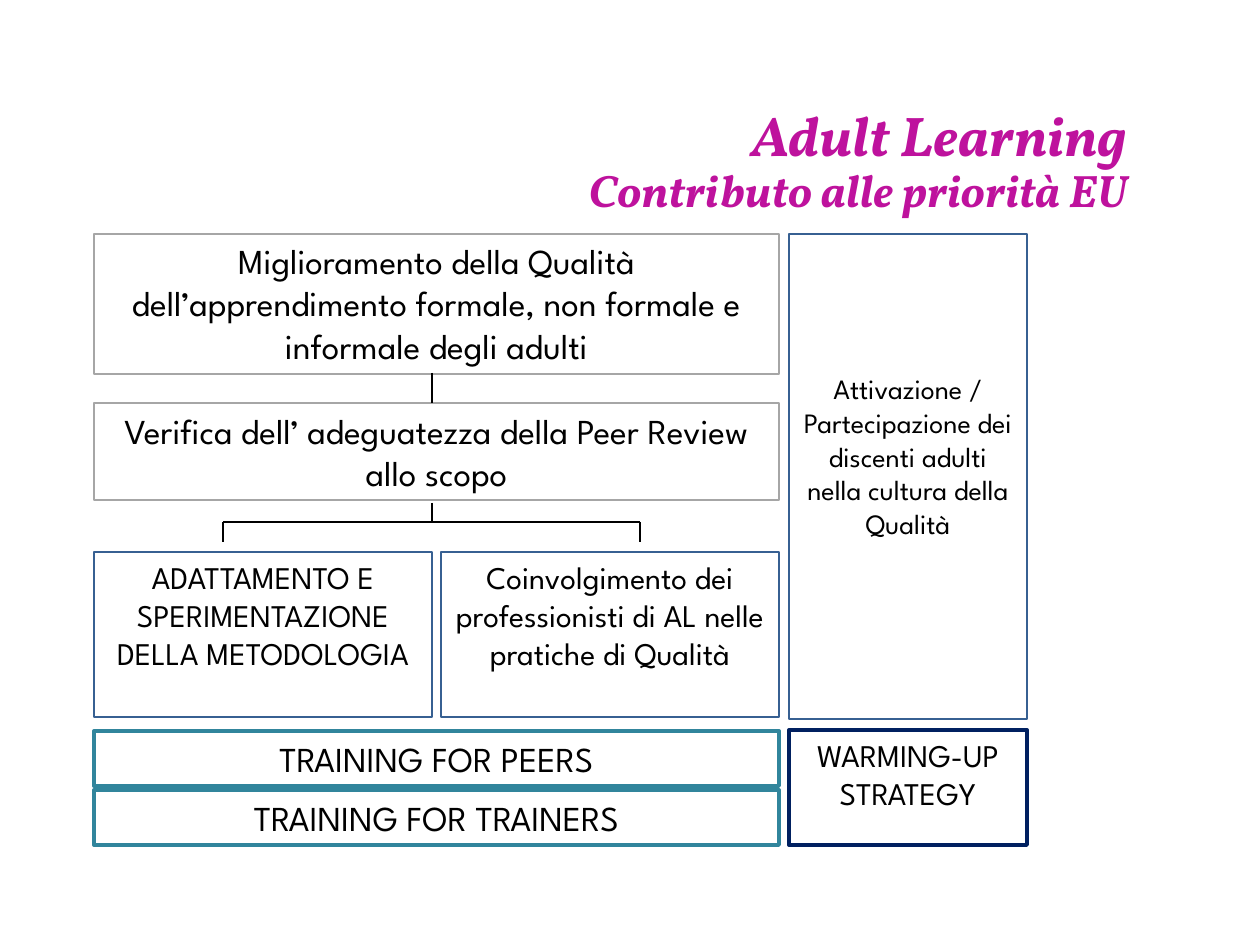
from lxml import etree
from pptx import Presentation, util as u
from pptx.dml.color import RGBColor
from pptx.enum import shapes, text
from pptx.oxml.ns import qn

PX = 914400 / 126  # EMU per px
COLORS = {"text": "000000", "title": "BE129D", "grey": "A6A6A6",
          "blue": "376092", "navy": "002060", "teal": "31859C"}
BODY_FONT, TITLE_FONT = "League Spartan", "Vollkorn"

# Columns
LEFT, HALF, GAP = 94, 338, 9
FULL = 2 * HALF + GAP
SIDE, SIDE_W = 789, 238


def px(n):
    return u.Emu(round(n * PX))


def color(name):
    return RGBColor.from_string(COLORS[name])


def write(p, words, size, font=BODY_FONT, ink="text", bold=False, italic=False,
          align=text.PP_ALIGN.CENTER, spacing=None):
    p.alignment = align
    if spacing:
        p.line_spacing = spacing
    r = p.add_run()
    r.text = words
    f = r.font
    f.name, f.size, f.bold, f.italic = font, u.Pt(size), bold, italic
    f.color.rgb = color(ink)


def add_title(s, lines):
    sp = s.shapes.title
    sp.left, sp.top, sp.width, sp.height = px(302), px(96), px(838), px(133)
    tf = sp.text_frame
    tf.auto_size = text.MSO_AUTO_SIZE.NONE
    tf.vertical_anchor = text.MSO_ANCHOR.MIDDLE
    for i, (words, size) in enumerate(lines):
        p = tf.add_paragraph() if i else tf.paragraphs[0]
        p.space_before = u.Pt(0)
        write(p, words, size, font=TITLE_FONT, ink="title", bold=True,
              italic=True, align=text.PP_ALIGN.RIGHT, spacing=0.9)


def add_box(s, x, y, w, h, words, size, border, weight=0.75, inset=6):
    sp = s.shapes.add_shape(shapes.MSO_SHAPE.RECTANGLE, px(x), px(y), px(w), px(h))
    sp.shadow.inherit = False
    sp.fill.background()
    sp.line.color.rgb = color(border)
    sp.line.width = u.Pt(weight)
    tf = sp.text_frame
    tf.word_wrap = True
    tf.vertical_anchor = text.MSO_ANCHOR.TOP
    tf.margin_top = px(inset)
    write(tf.paragraphs[0], words, size)


def add_line(s, x1, y1, x2, y2):
    ln = s.shapes.add_connector(shapes.MSO_CONNECTOR.STRAIGHT,
                                px(x1), px(y1), px(x2), px(y2))
    ln.line.color.rgb = color("text")
    ln.line.width = u.Pt(1.5)
    etree.SubElement(ln._element.spPr, qn("a:effectLst"))


def main():
    prs = Presentation()
    prs.slide_width, prs.slide_height = px(1260), px(945)
    s = prs.slides.add_slide(prs.slide_layouts[5])

    add_title(s, [("Adult Learning", 32), ("Contributo alle priorità EU", 26)])

    # Goals
    add_box(s, LEFT, 234, FULL, 140, "Miglioramento della Qualità "
            "dell’apprendimento formale, non formale e informale degli adulti",
            20, "grey")
    add_box(s, LEFT, 403, FULL, 97,
            "Verifica dell’ adeguatezza della Peer Review allo scopo", 20, "grey")

    # Two strands
    strands = ["ADATTAMENTO E SPERIMENTAZIONE DELLA METODOLOGIA",
               "Coinvolgimento dei professionisti di AL nelle pratiche di Qualità"]
    for i, words in enumerate(strands):
        add_box(s, LEFT + i * (HALF + GAP), 552, HALF, 165, words, 18, "blue")

    # Training bars
    for i, words in enumerate(["TRAINING FOR PEERS", "TRAINING FOR TRAINERS"]):
        add_box(s, LEFT, 731 + 59 * i, FULL, 55, words, 20, "teal", weight=2.25)

    # Side column
    add_box(s, SIDE, 234, SIDE_W, 485, "Attivazione / Partecipazione dei "
            "discenti adulti nella cultura della Qualità", 16, "blue", inset=138)
    add_box(s, SIDE, 730, SIDE_W, 115, "WARMING-UP STRATEGY", 18, "navy", weight=2.25)

    # Tree lines
    trunk, branches, fork = 432, (223, 640), 522
    add_line(s, trunk, 373, trunk, 403)
    add_line(s, trunk, 503, trunk, fork)
    add_line(s, branches[0], fork, branches[1], fork)
    for x in branches:
        add_line(s, x, fork, x, 542)

    prs.save("out.pptx")


if __name__ == "__main__":
    main()
